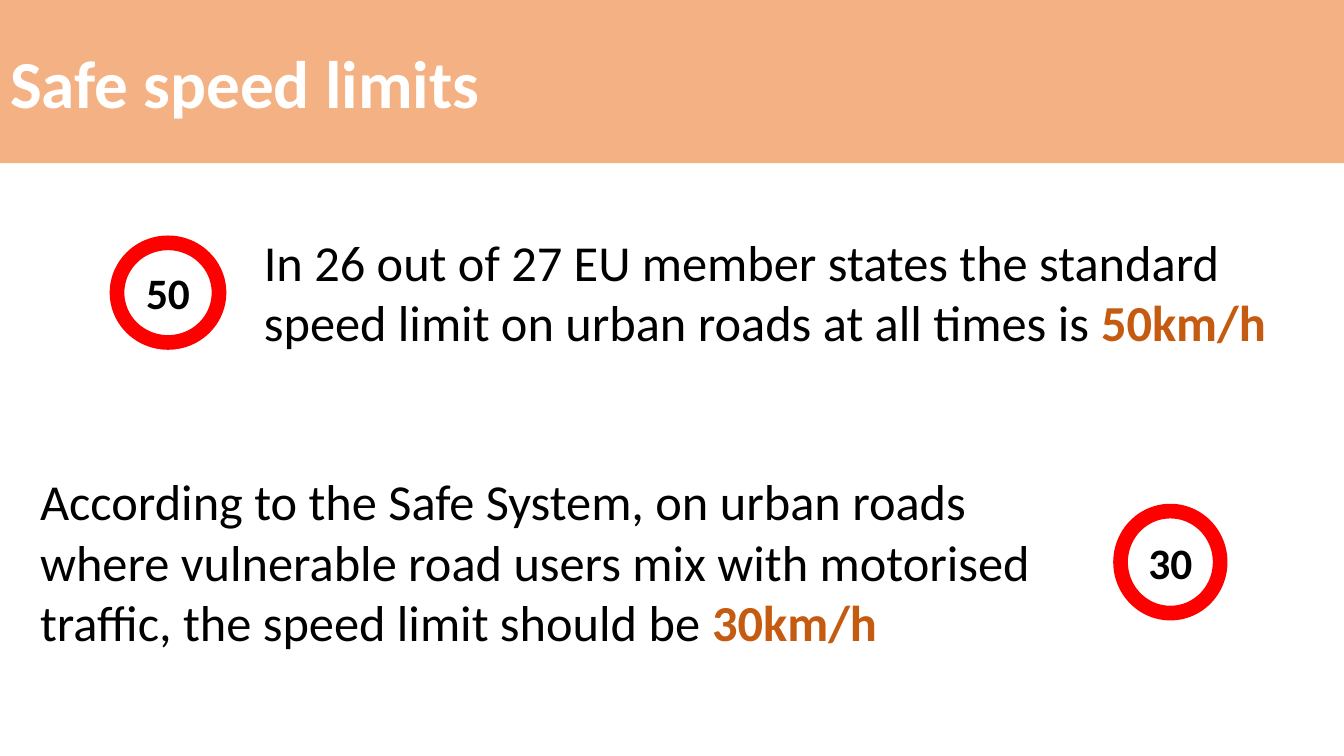
from pptx import Presentation
from pptx.dml.color import RGBColor
from pptx.enum.shapes import MSO_SHAPE
from pptx.enum.text import MSO_ANCHOR, MSO_AUTO_SIZE, PP_ALIGN
from pptx.util import Cm, Pt

OVAL = MSO_SHAPE.OVAL
MIDDLE = MSO_ANCHOR.MIDDLE
NO_AUTOFIT = MSO_AUTO_SIZE.NONE
LEFT, CENTER = PP_ALIGN.LEFT, PP_ALIGN.CENTER

COLORS = {
    "banner": "F4B183",
    "white": "FFFFFF",
    "black": "000000",
    "limit": "C55A11",
    "sign": "FF0000",
}


def add_run(paragraph, text, color, size, bold=False):
    run = paragraph.add_run()
    run.text = text
    for attribute, value in {"name": "Calibri", "size": Pt(size), "bold": bold}.items():
        setattr(run.font, attribute, value)
    run.font.color.rgb = RGBColor.from_string(COLORS[color])


prs = Presentation()
prs.slide_width, prs.slide_height = Cm(33.87), Cm(19.05)
slide = prs.slides.add_slide(prs.slide_layouts[5])

# Banner with the title
title = slide.shapes.title
title.left, title.top, title.width, title.height = Cm(0), Cm(0), prs.slide_width, Cm(4.11)
title.fill.solid()
title.fill.fore_color.rgb = RGBColor.from_string(COLORS["banner"])
title.text_frame.auto_size = NO_AUTOFIT
title.text_frame.vertical_anchor = MIDDLE
heading = title.text_frame.paragraphs[0]
heading.alignment = LEFT
add_run(heading, "Safe speed limits", "white", 48, bold=True)

# Statements: box, sentence, speed limit
statements = [
    ((6.4, 5.69, 26.52, 3.33),
     "In 26 out of 27 EU member states the standard speed limit on urban roads "
     "at all times is ", "50km/h"),
    ((0.76, 11.73, 26.57, 4.88),
     "According to the Safe System, on urban roads where vulnerable road users mix "
     "with motorised traffic, the speed limit should be ", "30km/h"),
]
for box, sentence, limit in statements:
    statement = slide.shapes.add_textbox(*map(Cm, box))
    statement.text_frame.word_wrap = True
    paragraph = statement.text_frame.paragraphs[0]
    add_run(paragraph, sentence, "black", 36)
    add_run(paragraph, limit, "limit", 36, bold=True)

# Round speed signs: box, number
signs = [
    ((2.95, 6.12, 2.57, 2.51), "50"),
    ((28.24, 12.88, 2.51, 2.57), "30"),
]
for box, number in signs:
    sign = slide.shapes.add_shape(OVAL, *map(Cm, box))
    sign.shadow.inherit = False
    sign.fill.background()
    sign.line.color.rgb = RGBColor.from_string(COLORS["sign"])
    sign.line.width = Pt(10.5)
    frame = sign.text_frame
    for side in ("left", "top", "right", "bottom"):
        setattr(frame, f"margin_{side}", Cm(0))
    frame.word_wrap = False
    frame.vertical_anchor = MIDDLE
    frame.paragraphs[0].alignment = CENTER
    add_run(frame.paragraphs[0], number, "black", 31, bold=True)

prs.save("out.pptx")
